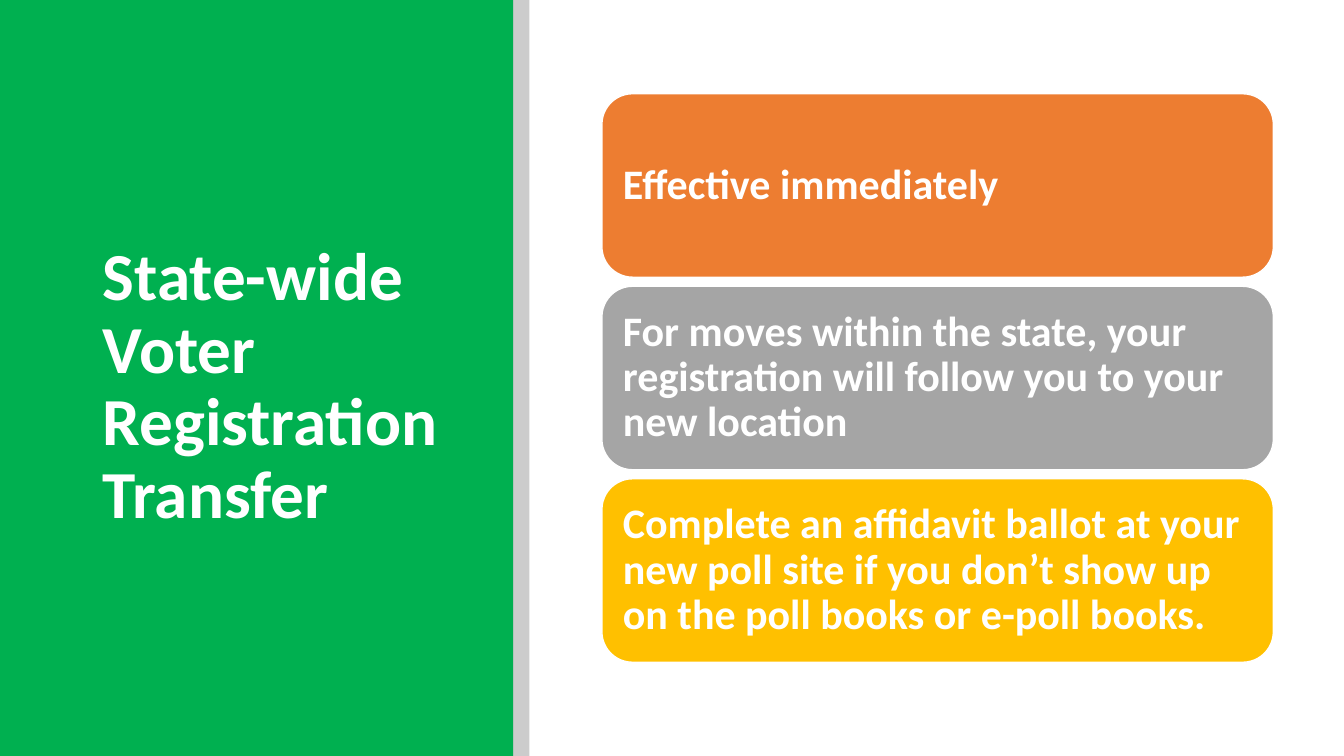
from lxml import etree
from pptx import Presentation, util as u
from pptx.dml.color import RGBColor
from pptx.enum import shapes, text
from pptx.oxml.ns import qn

WHITE = "FFFFFF"
PANEL_WIDTH, DIVIDER_WIDTH = 5.09, 0.16
CARD_LEFT, CARD_TOP, CARD_WIDTH, CARD_HEIGHT = 5.97, 0.93, 6.66, 1.82
CARD_PITCH = 1.91
CARDS = [
    ("ED7D31", "Effective immediately"),
    ("A5A5A5", "For moves within the state, your registration will follow you to your new location"),
    ("FFC000", "Complete an affidavit ballot at your new poll site if you don’t show up "
               "on the poll books or e-poll books."),
]

deck = Presentation()
deck.slide_width, deck.slide_height = u.Inches(13.33), u.Inches(7.5)
page = deck.slides.add_slide(deck.slide_layouts[6])


def add_block(kind, left, top, width, height, color):
    block = page.shapes.add_shape(kind, *map(u.Inches, (left, top, width, height)))
    block.shadow.inherit = False
    block.fill.solid()
    block.fill.fore_color.rgb = RGBColor.from_string(color)
    block.line.fill.background()
    return block


def write(box, words, size, inset):
    """Put bold white left-aligned text in the vertical middle of a shape."""
    frame = box.text_frame
    frame.word_wrap = True
    frame.vertical_anchor = text.MSO_ANCHOR.MIDDLE
    frame.margin_left = frame.margin_right = u.Inches(inset)
    frame.margin_top = frame.margin_bottom = u.Inches(inset)
    para = frame.paragraphs[0]
    para.alignment = text.PP_ALIGN.LEFT
    para.line_spacing = 0.9
    span = para.add_run()
    span.text = words
    span.font.name, span.font.size, span.font.bold = "Calibri", u.Pt(size), True
    span.font.color.rgb = RGBColor.from_string(WHITE)


# Title panel with its translucent divider
rectangle = shapes.MSO_SHAPE.RECTANGLE
add_block(rectangle, 0, 0, PANEL_WIDTH, 7.5, "00B050")
title = page.shapes.add_textbox(*map(u.Inches, (0.92, 0.89, 3.65, 5.91)))
write(title, "State-wide Voter Registration Transfer", 48, 0.1)
divider = add_block(rectangle, PANEL_WIDTH, 0, DIVIDER_WIDTH, 7.5, "000000")
divider_color = divider.fill._xPr.find(qn("a:solidFill"))[0]
etree.SubElement(divider_color, qn("a:alpha"), val="20000")

# Stacked message cards
for row, (color, words) in enumerate(CARDS):
    card = add_block(shapes.MSO_SHAPE.ROUNDED_RECTANGLE, CARD_LEFT,
                     CARD_TOP + row * CARD_PITCH, CARD_WIDTH, CARD_HEIGHT, color)
    card.line.color.rgb = RGBColor.from_string(WHITE)
    card.line.width = u.Pt(1)
    write(card, words, 30, 0.12)

deck.save("out.pptx")
